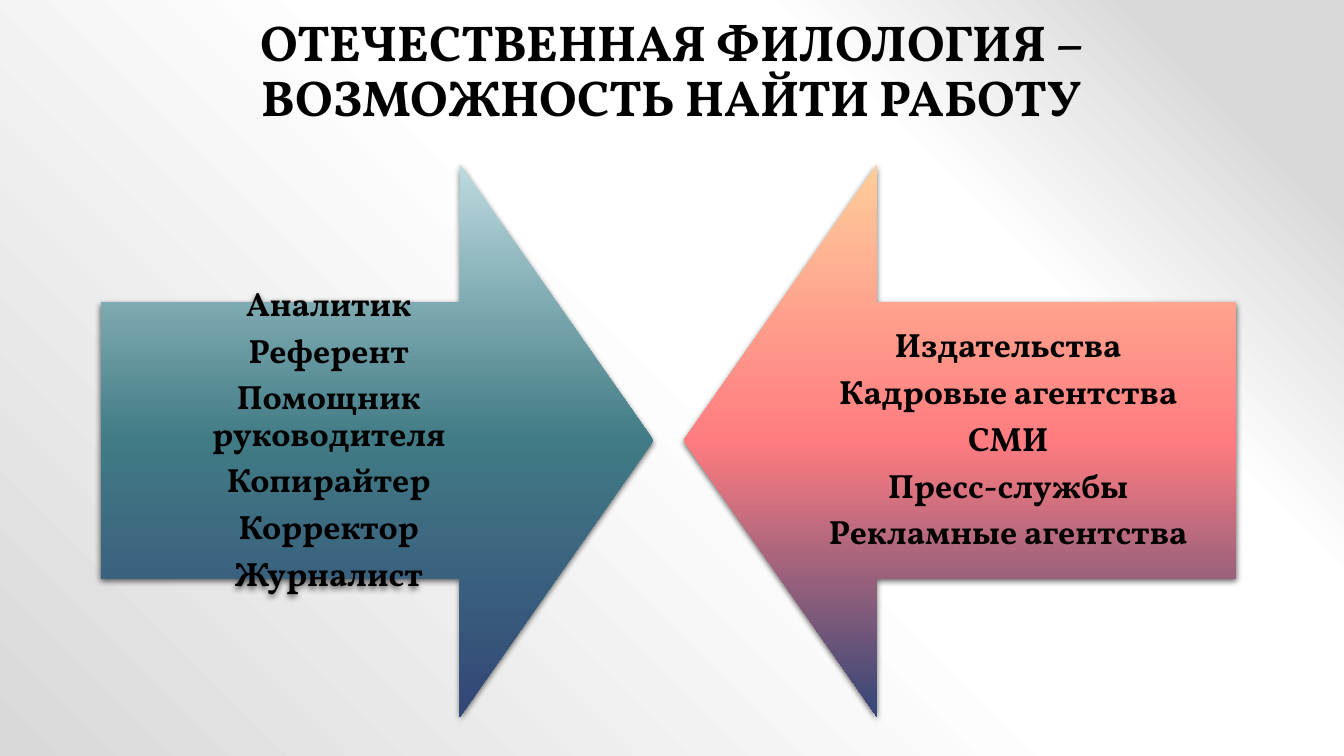
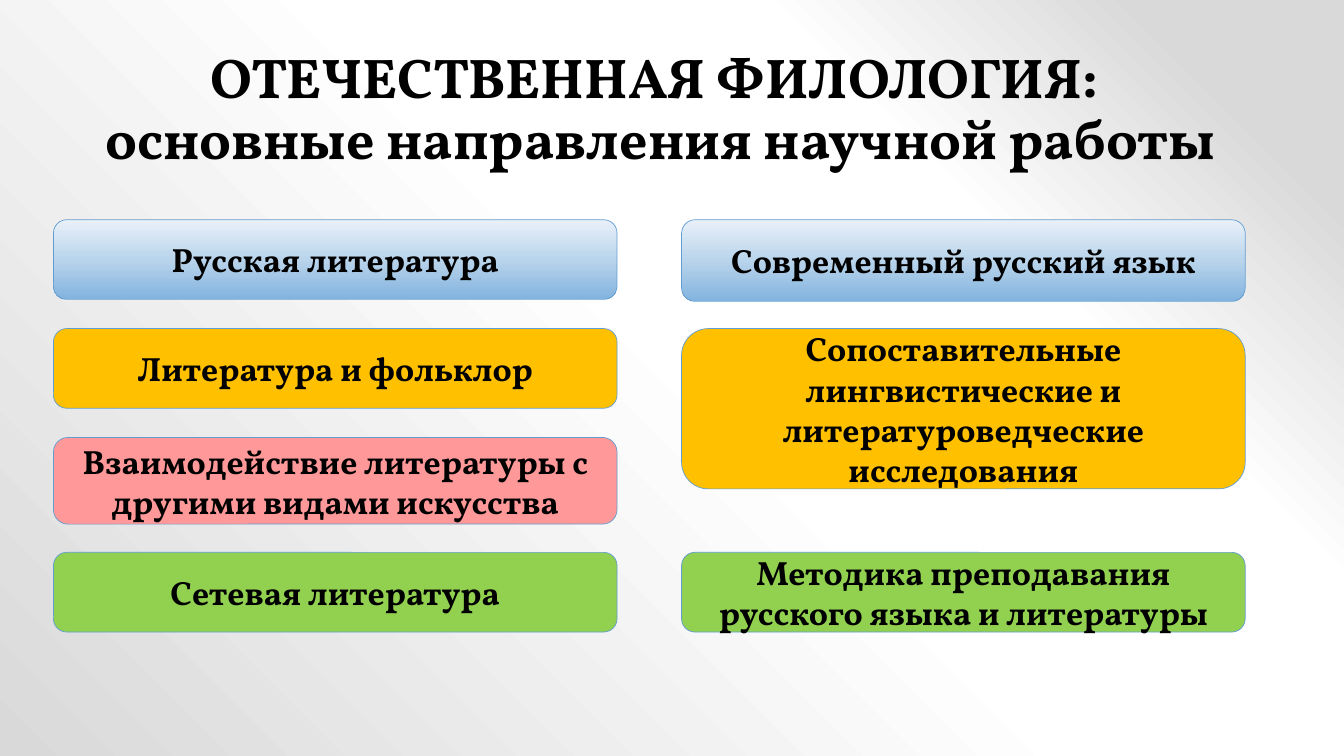
"""Build two slides on Russian philology: job prospects and research directions."""
from pptx import Presentation
from pptx.dml.color import RGBColor
from pptx.enum.shapes import MSO_SHAPE as Shape
from pptx.enum.text import MSO_ANCHOR as Anchor, PP_ALIGN as Align
from pptx.oxml import parse_xml
from pptx.oxml.ns import nsdecls, qn
from pptx.util import Inches, Pt

FONT = "Vollkorn"
BLACK = RGBColor(0x00, 0x00, 0x00)
WHITE = RGBColor(0xFF, 0xFF, 0xFF)
GREY = RGBColor(0xD9, 0xD9, 0xD9)
NAVY = RGBColor(0x33, 0x46, 0x77)
TEAL = RGBColor(0x41, 0x7B, 0x85)
PALE_TEAL = RGBColor(0xBD, 0xDA, 0xDF)
CORAL = RGBColor(0xFF, 0x7C, 0x80)
PEACH = RGBColor(0xFF, 0xCD, 0x9B)
ICE = RGBColor(0xE9, 0xF1, 0xF9)
SKY = RGBColor(0xB9, 0xD4, 0xEB)
BLUE = RGBColor(0x82, 0xB3, 0xDF)
OUTLINE = RGBColor(0x62, 0x9D, 0xD1)
AMBER = RGBColor(0xFF, 0xC0, 0x00)
PINK = RGBColor(0xFF, 0x99, 0x99)
GREEN = RGBColor(0x92, 0xD0, 0x50)

DOWNWARD = '<a:lin ang="5400000" scaled="0"/>'
FROM_TOP_RIGHT = '<a:path path="circle"><a:fillToRect l="100000" b="100000"/></a:path>'
SHADOW = (
    f'<a:outerShdw {nsdecls("a")} blurRad="57150" dist="19050" dir="5400000" algn="ctr" rotWithShape="0">'
    f'<a:srgbClr val="{BLACK}"><a:alpha val="63000"/></a:srgbClr></a:outerShdw>'
)


def blend(fill, owner, stops, direction=DOWNWARD):
    fill.gradient()
    plain = owner.find(".//" + qn("a:gradFill"))
    marks = "".join(
        f'<a:gs pos="{share * 1000}"><a:srgbClr val="{color}"/></a:gs>' for share, color in stops
    )
    plain.getparent().replace(plain, parse_xml(
        f'<a:gradFill {nsdecls("a")} rotWithShape="1"><a:gsLst>{marks}</a:gsLst>{direction}</a:gradFill>'
    ))


def write(frame, lines, size, anchor=Anchor.MIDDLE, **spacing):
    frame.word_wrap = True
    frame.vertical_anchor = anchor
    frame.text = "\n".join(lines)
    for paragraph in frame.paragraphs:
        for key, value in {"alignment": Align.CENTER, **spacing}.items():
            setattr(paragraph, key, value)
        for run in paragraph.runs:
            for key, value in {"name": FONT, "size": Pt(size), "bold": True}.items():
                setattr(run.font, key, value)
            run.font.color.rgb = BLACK


deck = Presentation()
deck.slide_width, deck.slide_height = Inches(13.33), Inches(7.5)
master = deck.slide_master
blend(master.background.fill, master.element,
      [(10, GREY), (28, WHITE), (48, WHITE), (100, GREY)], FROM_TOP_RIGHT)

titles = [
    ("ОТЕЧЕСТВЕННАЯ ФИЛОЛОГИЯ – ВОЗМОЖНОСТЬ НАЙТИ РАБОТУ", 36, (1.33, 0.59, 10.67, 0.72)),
    ("ОТЕЧЕСТВЕННАЯ ФИЛОЛОГИЯ: \vосновные направления научной работы", 40, (0.68, 0.3, 11.73, 1.45)),
]
slides = []
for heading, size, place in titles:
    slide = deck.slides.add_slide(deck.slide_layouts[6])
    title = slide.shapes.add_textbox(*map(Inches, place))
    write(title.text_frame, [heading], size, Anchor.BOTTOM, line_spacing=0.9)
    slides.append(slide)
jobs_slide, research_slide = slides

ARROW_TOP, ARROW_SIDE = 1.63, 5.48
arrows = [
    (Shape.RIGHT_ARROW, 1, (PALE_TEAL, TEAL, NAVY),
     ["Аналитик", "Референт", "Помощник руководителя", "Копирайтер", "Корректор", "Журналист"]),
    (Shape.LEFT_ARROW, 6.78, (PEACH, CORAL, NAVY),
     ["Издательства", "Кадровые агентства", "СМИ", "Пресс-службы", "Рекламные агентства"]),
]
for direction, left, colors, jobs in arrows:
    arrow = jobs_slide.shapes.add_shape(
        direction, *map(Inches, (left, ARROW_TOP, ARROW_SIDE, ARROW_SIDE)))
    arrow.adjustments[0], arrow.adjustments[1] = 0.5, 0.35
    blend(arrow.fill, arrow.element, zip((0, 50, 100), colors))
    arrow.line.fill.background()
    arrow.shadow.inherit = False
    arrow.element.spPr.find(qn("a:effectLst")).append(parse_xml(SHADOW))
    for side in ("left", "top", "right", "bottom"):
        setattr(arrow.text_frame, f"margin_{side}", Inches(0.19))
    write(arrow.text_frame, jobs, 24, line_spacing=0.9, space_after=Pt(7.5))

COLUMNS = (0.53, 6.76)
ROWS = (2.18, 3.26, 4.34, 5.48)
TOPIC_WIDTH = 5.59
topics = [
    (0, 0, 0.79, None, "Русская литература"),
    (0, 1, 0.79, AMBER, "Литература и фольклор"),
    (0, 2, 0.86, PINK, "Взаимодействие литературы с другими видами искусства"),
    (0, 3, 0.79, GREEN, "Сетевая литература"),
    (1, 0, 0.81, None, "Современный русский язык"),
    (1, 1, 1.59, AMBER, "Сопоставительные лингвистические и литературоведческие исследования"),
    (1, 3, 0.79, GREEN, "Методика преподавания русского языка и литературы"),
]
for column, row, height, color, topic in topics:
    card = research_slide.shapes.add_shape(
        Shape.ROUNDED_RECTANGLE, *map(Inches, (COLUMNS[column], ROWS[row], TOPIC_WIDTH, height)))
    if color is None:
        blend(card.fill, card.element, [(0, ICE), (50, SKY), (100, BLUE)])
    else:
        card.fill.solid()
        card.fill.fore_color.rgb = color
    card.line.color.rgb = OUTLINE
    card.line.width = Pt(0.5)
    card.shadow.inherit = False
    write(card.text_frame, [topic], 24)

deck.save("out.pptx")
